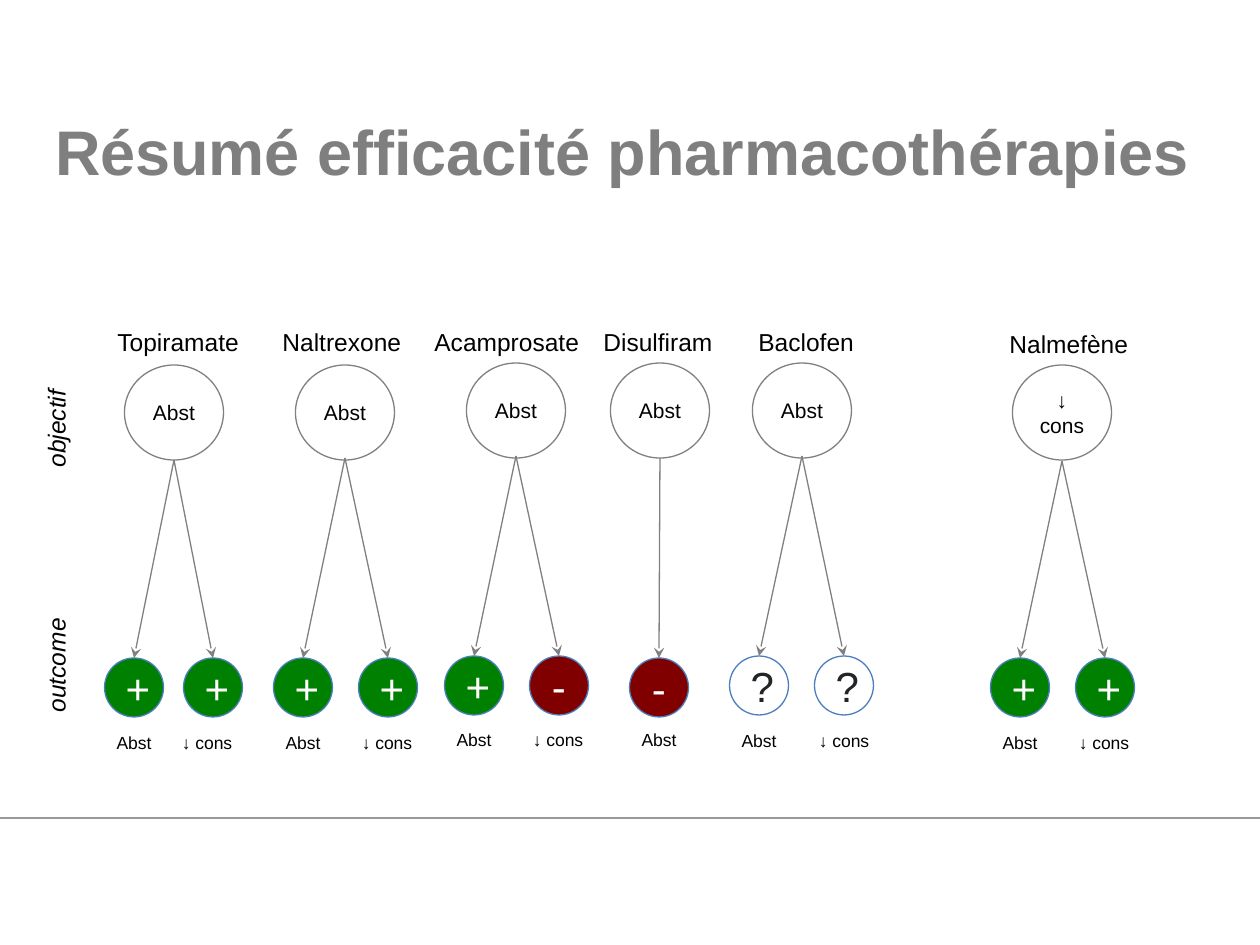
from lxml import etree
from pptx import Presentation
from pptx.dml.color import RGBColor
from pptx.enum.shapes import MSO_CONNECTOR as CXN, MSO_SHAPE as SHAPE
from pptx.enum.text import MSO_ANCHOR as ANCHOR, PP_ALIGN as ALIGN
from pptx.oxml.ns import qn
from pptx.util import Emu, Pt

PX = 914400 / 126
BLACK = RGBColor(0x00, 0x00, 0x00)
WHITE = RGBColor(0xFF, 0xFF, 0xFF)
INK = RGBColor(0x22, 0x25, 0x27)
GREY = RGBColor(0x80, 0x80, 0x80)
TITLE_GREY = RGBColor(0x7F, 0x7F, 0x7F)
RULE_GREY = RGBColor(0x99, 0x99, 0x99)
BLUE = RGBColor(0x4B, 0x7E, 0xBC)
GREEN = RGBColor(0x00, 0x80, 0x00)
RED = RGBColor(0x80, 0x00, 0x00)

prs = Presentation()
prs.slide_width, prs.slide_height = Emu(9144000), Emu(6858000)
s = prs.slides.add_slide(prs.slide_layouts[6])


def add_text(box, text, size, shape=None, wrap=True, align=None, **font):
    """Text box, or a preset shape holding text; box is in px."""
    pos = [Emu(round(v * PX)) for v in box]
    sp = s.shapes.add_shape(shape, *pos) if shape else s.shapes.add_textbox(*pos)
    tf = sp.text_frame
    tf.word_wrap = wrap
    if shape:
        sp.shadow.inherit = False
        tf.vertical_anchor = ANCHOR.MIDDLE
    p = tf.paragraphs[0]
    p.alignment = align
    r = p.add_run()
    r.text = text
    color = font.pop("color", BLACK)
    for key, value in {"name": "Arial", "size": Pt(size), **font}.items():
        setattr(r.font, key, value)
    r.font.color.rgb = color
    return sp


def add_line(x1, y1, x2, y2, color):
    cx = s.shapes.add_connector(CXN.STRAIGHT, *[Emu(round(v * PX)) for v in (x1, y1, x2, y2)])
    cx.line.color.rgb = color
    cx.line.width = Pt(0.75)
    etree.SubElement(cx._element.spPr, qn("a:effectLst"))
    return cx


# Footer rule
add_line(0, 818, 1260, 818, RULE_GREY)

# Title
title = add_text((55, 71, 1166, 158), "Résumé efficacité pharmacothérapies", 36,
                 bold=True, color=TITLE_GREY)
tf = title.text_frame
tf.vertical_anchor = ANCHOR.MIDDLE
for side in ("left", "top", "right", "bottom"):
    setattr(tf, f"margin_{side}", 0)

# Row labels, reading upwards
for text, top, height in (("objectif", 383, 97), ("outcome", 612, 113)):
    sp = add_text((35, top, 55, height), text, 14, wrap=False, italic=True)
    sp.text_frame._txBody.bodyPr.set("vert", "vert270")

# Drug columns: name, (name left, top, width), goal, goal centre, goal top,
# arrow start, outcome top, label top, outcomes (centre, symbol, label, label centre)
ABST, CONS = "Abst", "↓ cons"
DRUGS = [
    ("Topiramate", (105, 321, 147), ABST, 174, 365, 460, 658, 726,
     [(134, "+", ABST, 134), (213, "+", CONS, 207)]),
    ("Naltrexone", (270, 321, 145), ABST, 345, 365, 458, 658, 726,
     [(303, "+", ABST, 303), (388, "+", CONS, 387)]),
    ("Acamprosate", (422, 321, 171), ABST, 516, 363, 456, 656, 723,
     [(474, "+", ABST, 474), (559, "-", CONS, 558)]),
    ("Disulfiram", (591, 321, 135), ABST, 660, 363, 458, 658, 723,
     [(659, "-", ABST, 659)]),
    ("Baclofen", (746, 321, 122), ABST, 802, 363, 456, 656, 724,
     [(759, "?", ABST, 759), (844, "?", CONS, 844)]),
    ("Nalmefène", (997, 323, 145), CONS, 1062, 365, 461, 658, 726,
     [(1020, "+", ABST, 1020), (1105, "+", CONS, 1104)]),
]
STYLES = {"+": (GREEN, WHITE), "-": (RED, WHITE), "?": (WHITE, INK)}
LABEL_WIDTHS = {ABST: 79, CONS: 126}
GOAL_W, GOAL_H, DOT = 99, 95, 59

for name, (left, top, width), goal, x, goal_top, start, dot_top, label_top, outcomes in DRUGS:
    add_text((left, top, width, 43), name, 14, wrap=False)
    sp = add_text((x - GOAL_W / 2, goal_top, GOAL_W, GOAL_H), goal, 12,
                  shape=SHAPE.OVAL, align=ALIGN.CENTER)
    sp.fill.solid()
    sp.fill.fore_color.rgb = WHITE
    sp.line.color.rgb = GREY
    sp.line.width = Pt(0.75)

    for dot_x, symbol, label, label_x in outcomes:
        fill, ink = STYLES[symbol]
        dot = add_text((dot_x - DOT / 2, dot_top, DOT, DOT), symbol, 24,
                       shape=SHAPE.OVAL, align=ALIGN.CENTER, color=ink)
        dot.fill.solid()
        dot.fill.fore_color.rgb = fill
        dot.line.color.rgb = BLUE
        dot.line.width = Pt(0.75)

        arrow = add_line(x, start, dot_x, dot_top, GREY)
        arrow.end_connect(dot, 0)
        etree.SubElement(arrow.line._get_or_add_ln(), qn("a:tailEnd"), type="stealth")

        w = LABEL_WIDTHS[label]
        add_text((label_x - w / 2, label_top, w, 34), label, 10, align=ALIGN.CENTER)

prs.save("out.pptx")
